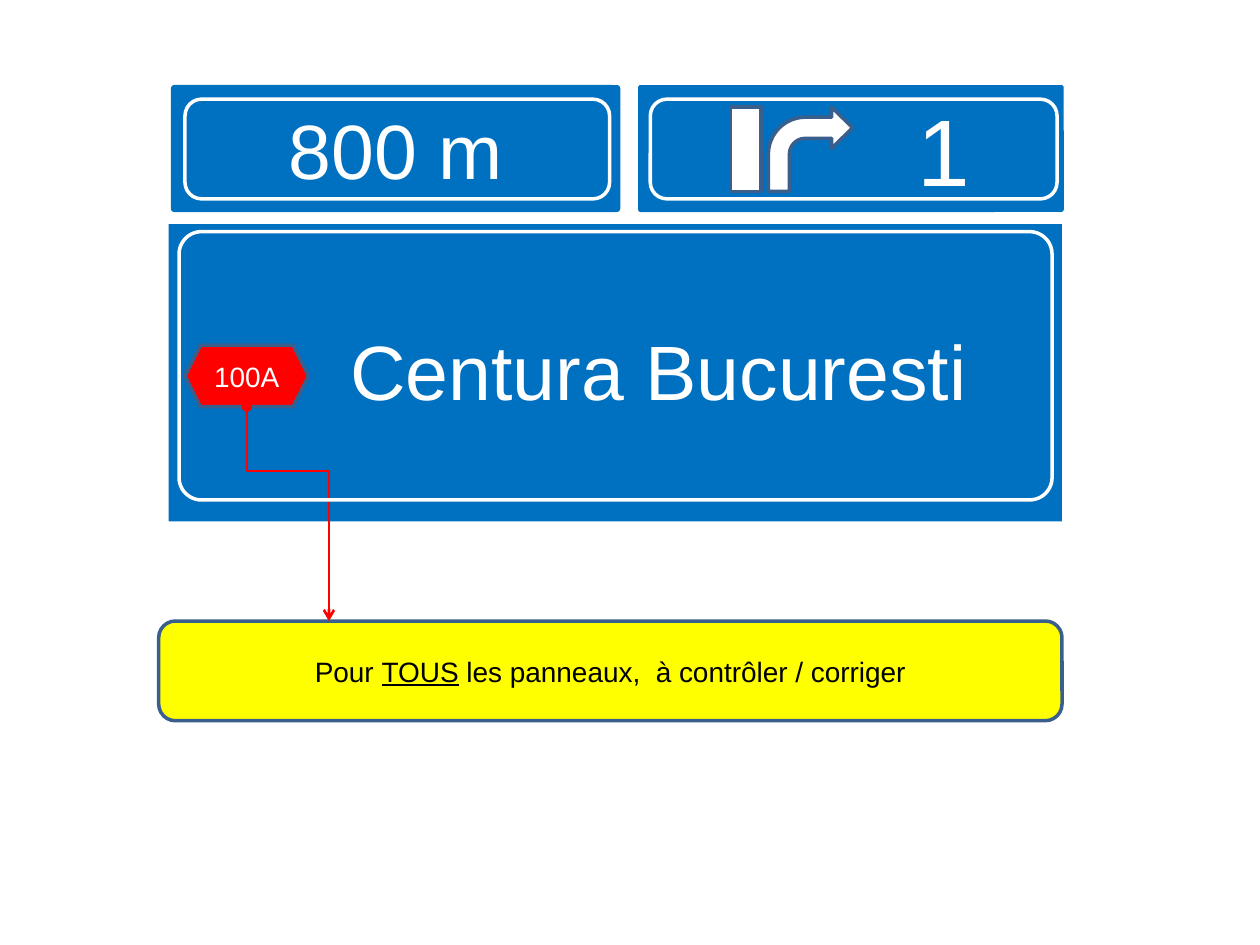
from dataclasses import dataclass

from lxml import etree
from pptx import Presentation
from pptx.dml.color import RGBColor
from pptx.enum.shapes import MSO_CONNECTOR, MSO_SHAPE
from pptx.enum.text import MSO_ANCHOR, PP_ALIGN
from pptx.oxml.ns import qn
from pptx.util import Cm, Pt


@dataclass(frozen=True)
class Theme:
    font: str = "Arial"
    sign: str = "0070C0"
    white: str = "FFFFFF"
    black: str = "000000"
    outline: str = "3A5F8C"
    red: str = "FF0000"
    yellow: str = "FFFF00"
    number: int = 54
    sign_text: int = 44
    body: int = 16


T = Theme()

# Boxes are left, top, width, height in centimetres.
DISTANCE = (3.48, 1.75, 8.99, 2.49)
EXIT = (12.9, 1.75, 8.51, 2.49)
DESTINATION = (3.4, 4.52, 18.01, 5.99)
NOTE = (3.2, 12.52, 18.21, 2.01)


def within(box, left, top, width, height):
    """Turn a box relative to another one into a box on the slide."""
    return box[0] + left, box[1] + top, width, height


def add_box(slide, kind, box, fill=None, line=None, adj=()):
    sp = slide.shapes.add_shape(kind, *map(Cm, box))
    sp.shadow.inherit = False
    if fill:
        sp.fill.solid()
        sp.fill.fore_color.rgb = RGBColor.from_string(fill)
    else:
        sp.fill.background()
    if line:
        sp.line.color.rgb = RGBColor.from_string(line)
        sp.line.width = Pt(2)
    else:
        sp.line.fill.background()
    for i, value in enumerate(adj):
        sp.adjustments[i] = value
    return sp


def write(sp, *runs, size, color=T.white, underlined=(), before=0,
          anchor=MSO_ANCHOR.MIDDLE, insets=(0.25, 0.13, 0.25, 0.13)):
    tf = sp.text_frame
    tf.word_wrap = True
    tf.vertical_anchor = anchor
    tf.margin_left, tf.margin_top, tf.margin_right, tf.margin_bottom = map(Cm, insets)
    p = tf.paragraphs[0]
    p.alignment = PP_ALIGN.CENTER
    p.space_before = Pt(before)
    for text in runs:
        r = p.add_run()
        r.text = text
        r.font.name = T.font
        r.font.size = Pt(size)
        r.font.color.rgb = RGBColor.from_string(color)
        if text in underlined:
            r.font.underline = True


def distance_sign(slide, box):
    sp = add_box(slide, MSO_SHAPE.ROUNDED_RECTANGLE, box, T.sign, T.sign, [0.016])
    write(sp, "800 m", size=T.sign_text)


def exit_sign(slide, box):
    sp = add_box(slide, MSO_SHAPE.ROUNDED_RECTANGLE, box, T.sign, T.sign, [0.007])
    write(sp, "1", size=T.number, insets=(3.99, 0.13, 0.25, 0.13))
    add_box(slide, MSO_SHAPE.RECTANGLE, within(box, 1.83, 0.41, 0.61, 1.7),
            T.white, T.outline)
    add_box(slide, MSO_SHAPE.BENT_ARROW, within(box, 2.59, 0.41, 1.7, 1.7),
            T.white, T.outline, [0.25, 0.245, 0.25, 0.438])


def destination_sign(slide, box):
    """Draw the sign and return the box of its road number."""
    sp = add_box(slide, MSO_SHAPE.RECTANGLE, box, T.sign)
    write(sp, "Centura Bucuresti", size=T.sign_text, before=4,
          anchor=MSO_ANCHOR.TOP, insets=(2, 2, 0.25, 0.6))
    road = within(box, 0.33, 2.44, 2.49, 1.24)
    write(add_box(slide, MSO_SHAPE.HEXAGON, road, T.red, T.outline),
          "100A", size=T.body)
    return road


def note(slide, box):
    sp = add_box(slide, MSO_SHAPE.ROUNDED_RECTANGLE, box, T.yellow, T.outline)
    write(sp, "Pour ", "TOUS", " les panneaux,  à contrôler / corriger",
          size=T.body, color=T.black, underlined=("TOUS",))


def elbow_down(slide, start, end, bend):
    """Draw an elbow that leaves downwards: a sideways one, turned by 270 degrees."""
    (x1, y1), (x2, y2) = start, end
    cx, cy = (x1 + x2) / 2, (y1 + y2) / 2
    dx, dy = (y2 - y1) / 2, (x2 - x1) / 2
    line = slide.shapes.add_connector(
        MSO_CONNECTOR.ELBOW, *map(Cm, (cx + dx, cy - dy, cx - dx, cy + dy)))
    line.line.color.rgb = RGBColor.from_string(T.red)
    line.line.width = Pt(1.5)
    props = line._element.spPr
    props.find(qn("a:xfrm")).set("rot", str(270 * 60000))
    guides = props.find(qn("a:prstGeom")).get_or_add_avLst()
    etree.SubElement(guides, qn("a:gd"), name="adj1", fmla=f"val {round(bend * 100000)}")
    ln = props.find(qn("a:ln"))
    etree.SubElement(ln, qn("a:headEnd"), type="oval")
    etree.SubElement(ln, qn("a:tailEnd"), type="arrow")
    etree.SubElement(props, qn("a:effectLst"))


def frame(slide, box, adj=0.167):
    add_box(slide, MSO_SHAPE.ROUNDED_RECTANGLE, box, line=T.white, adj=[adj])


def main():
    prs = Presentation()
    prs.slide_width, prs.slide_height = Cm(25.4), Cm(19.05)
    slide = prs.slides.add_slide(prs.slide_layouts[6])

    distance_sign(slide, DISTANCE)
    exit_sign(slide, EXIT)
    left, top, width, height = destination_sign(slide, DESTINATION)
    note(slide, NOTE)
    elbow_down(slide, (left + width / 2, top + height),
               (NOTE[0] + 3.43, NOTE[1]), bend=0.3)

    # The frames lie over the connector.
    frame(slide, within(DISTANCE, 0.25, 0.25, 8.56, 2.01))
    frame(slide, within(DESTINATION, 0.21, 0.15, 17.6, 5.41), adj=0.084)
    frame(slide, within(EXIT, 0.21, 0.25, 8.2, 2.01))

    prs.save("out.pptx")


if __name__ == "__main__":
    main()
